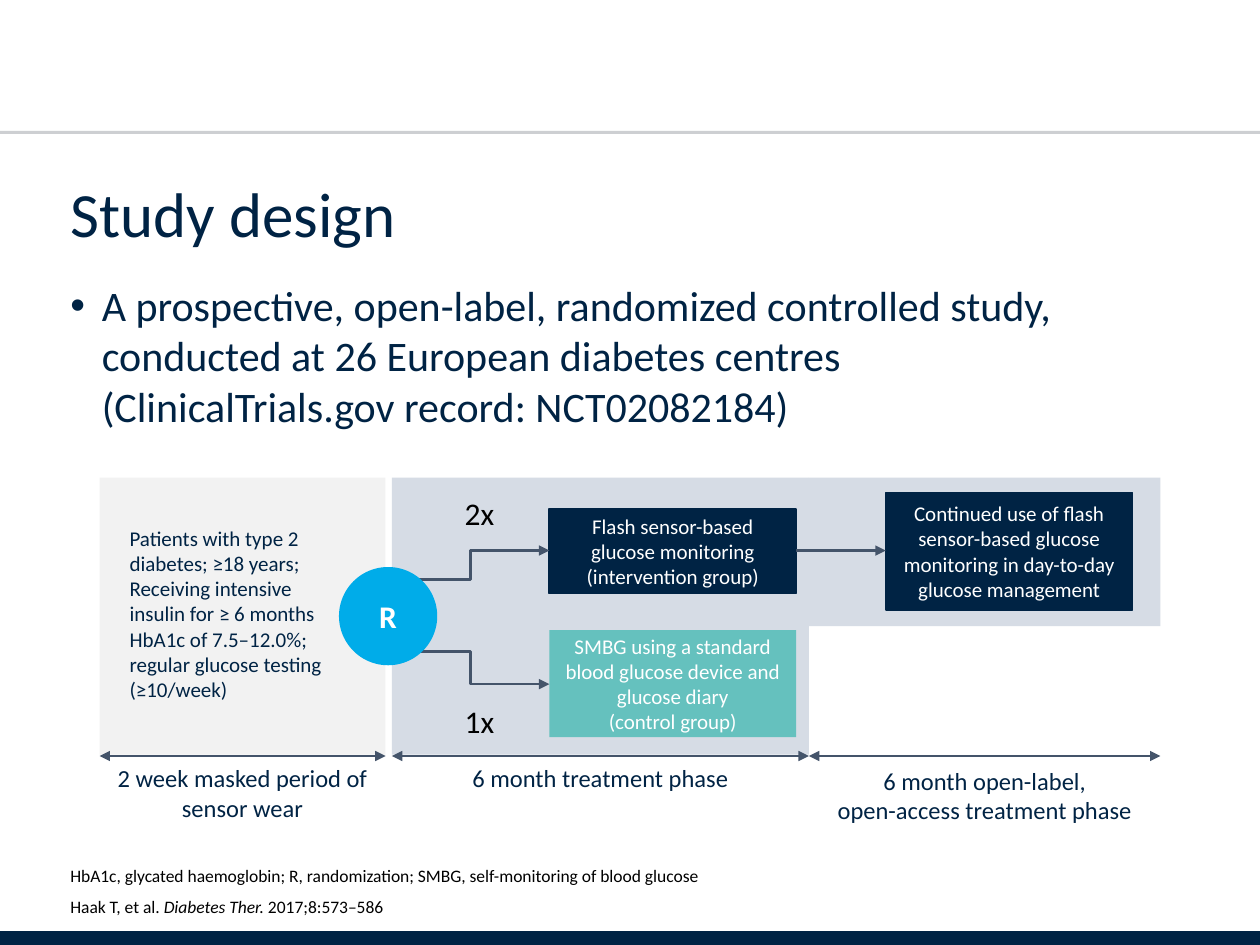
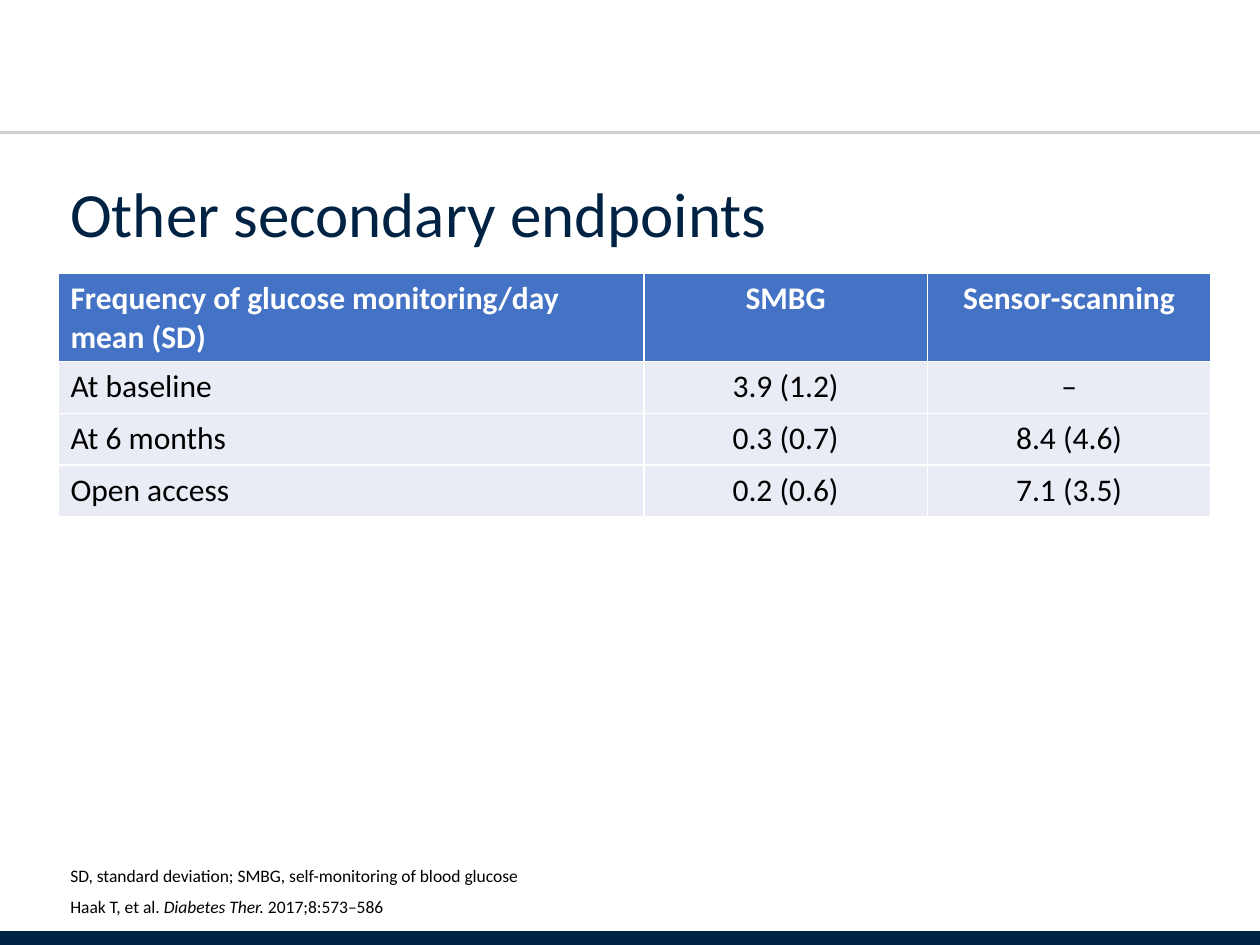
from lxml.etree import SubElement
from pptx import Presentation
from pptx.dml.color import RGBColor
from pptx.enum.shapes import MSO_CONNECTOR as LINE, MSO_SHAPE as SHAPE
from pptx.enum.text import MSO_ANCHOR as ANCHOR, PP_ALIGN as ALIGN
from pptx.oxml.ns import qn
from pptx.util import Inches, Pt

COLORS = {
    "navy": "002344", "rule": "9DA1A6", "slate": "44546A", "grey": "F2F2F2",
    "mist": "D6DCE5", "teal": "65C1BE", "cyan": "00ACE9", "blue": "4472C4",
    "row": "E9EBF5", "white": "FFFFFF", "black": "000000",
}
TITLE_BOX = (0.46, 1.25, 9.13, 0.74)
BODY_BOX = (0.46, 2.17, 9.13, 1.5)
DIAGRAM_BOX = (0.79, 3.79, 8.42, 2.81)
TABLE_BOX = (0.46, 2.17, 9.15, 1.92)
NOTE_BOX = (0.46, 6.73, 9.13, 0.6)
CITATION = "Haak T, et al. *Diabetes Ther.* 2017;8:573–586"


def rgb(name):
    """Return the named colour."""
    return RGBColor.from_string(COLORS[name])


def write(tf, paragraphs, size, color="navy", bold=False, **layout):
    """Fill a text frame; asterisks enclose italics, newlines break lines."""
    tf.word_wrap = True
    for i, text in enumerate(paragraphs):
        p = tf.paragraphs[0] if i == 0 else tf.add_paragraph()
        for name, value in layout.items():
            setattr(p, name, value)
        for j, part in enumerate(text.split("*")):
            for k, line in enumerate(part.split("\n")):
                if k:
                    p.add_line_break()
                r = p.add_run()
                r.text = line
                fmt = {"name": "Calibri", "size": Pt(size), "bold": bold, "italic": j % 2 == 1}
                for name, value in fmt.items():
                    setattr(r.font, name, value)
                r.font.color.rgb = rgb(color)


def add_text(s, box, paragraphs, size, anchor=ANCHOR.TOP, **style):
    """Add a wrapped text box and return its frame."""
    tf = s.shapes.add_textbox(*map(Inches, box)).text_frame
    tf.vertical_anchor = anchor
    write(tf, paragraphs, size, **style)
    return tf


def add_block(s, kind, box, fill, paragraphs=(), size=12, bold=False, outlined=False):
    """Add a filled shape with centred white text."""
    sp = s.shapes.add_shape(kind, *map(Inches, box))
    sp.shadow.inherit = False
    sp.fill.solid()
    sp.fill.fore_color.rgb = rgb(fill)
    if outlined:
        sp.line.color.rgb = rgb(fill)
        sp.line.width = Pt(1)
    else:
        sp.line.fill.background()
    sp.text_frame.vertical_anchor = ANCHOR.MIDDLE
    write(sp.text_frame, paragraphs, size, "white", bold, alignment=ALIGN.CENTER)


def add_line(s, start, end, color="slate", width=1.5, kind=LINE.STRAIGHT, ends=(), alpha=None):
    """Add a connector with optional arrowheads and opacity."""
    cn = s.shapes.add_connector(kind, *map(Inches, start + end))
    cn.line.color.rgb = rgb(color)
    cn.line.width = Pt(width)
    ln = cn.line._get_or_add_ln()
    if alpha:
        SubElement(ln.find(".//" + qn("a:srgbClr")), qn("a:alpha"), val=str(alpha * 1000))
    for end_name in ends:
        SubElement(ln, qn(f"a:{end_name}End"), type="triangle")
    SubElement(cn._element.spPr, qn("a:effectLst"))


def add_frame(prs, title, abbreviations):
    """Add a slide with its bands, title and footnotes."""
    s = prs.slides.add_slide(prs.slide_layouts[6])
    add_line(s, (0, 7.46), (10, 7.46), "navy", 10)
    add_line(s, (0, 1.05), (10, 1.05), "rule", 1.75, alpha=50)
    tf = add_text(s, TITLE_BOX, [title], 36, ANCHOR.BOTTOM, line_spacing=0.9)
    tf.margin_bottom = 0
    add_text(s, NOTE_BOX, [abbreviations, CITATION], 10, ANCHOR.BOTTOM,
             color="black", space_after=Pt(6))
    return s


def add_bullets(s, box, items):
    """Add a bulleted body text."""
    tf = add_text(s, box, items, 24, space_after=Pt(6))
    for p in tf.paragraphs:
        pPr = p._p.get_or_add_pPr()
        pPr.set("marL", str(Inches(0.25)))
        pPr.set("indent", str(-Inches(0.25)))
        SubElement(pPr, qn("a:buFont"), typeface="Arial")
        SubElement(pPr, qn("a:buChar"), char="•")


def add_study_diagram(s, box):
    """Draw the trial phases, both arms and the timeline."""
    left, top, width, _ = box
    masked_w, treat_x, open_x = 2.27, 2.32, 5.63
    arm_x, arm_w, fork_top, fork_bottom = 3.57, 1.96, 0.58, 1.64
    later_x, phase_h = 6.24, 2.2

    def at(x, y, *size):
        return (left + x, top + y, *size)

    phases = [
        (0, masked_w, phase_h, "grey", ["2 week masked period of sensor wear"]),
        (treat_x, open_x - treat_x, phase_h, "mist", ["6 month treatment phase"]),
        (open_x, width - open_x, 1.18, "mist", ["6 month open-label,", "open-access treatment phase"]),
    ]
    for x, w, h, fill, label in phases:
        add_block(s, SHAPE.RECTANGLE, at(x, 0, w, h), fill)
        add_line(s, at(x, phase_h + 0.01), at(x + w, phase_h + 0.01), ends=("head", "tail"))
        add_text(s, at(x, phase_h + 0.02 * len(label), w, 0.57), label, 14, alignment=ALIGN.CENTER)

    add_text(s, at(0.14, 0.33, 1.82, 1.51), [
        "Patients with type 2 diabetes; ≥18 years;",
        "Receiving intensive insulin for ≥ 6 months",
        "HbA1c of 7.5–12.0%; regular glucose testing (≥10/week)"], 12)

    arms = [
        (arm_x, 0.25, 0.67, "navy", ["Flash sensor-based glucose monitoring (intervention group)"]),
        (arm_x, 1.21, 0.85, "teal",
         ["SMBG using a standard blood glucose device and glucose diary", "(control group)"]),
        (later_x, 0.12, 0.93, "navy",
         ["Continued use of flash sensor-based glucose monitoring in day-to-day glucose management"]),
    ]
    for x, y, h, fill, text in arms:
        add_block(s, SHAPE.RECTANGLE, at(x, y, arm_w, h), fill, text, outlined=fill == "navy")

    forks = [(0.81, fork_top, 0.08, "2x"), (1.38, fork_bottom, 1.73, "1x")]
    for start_y, end_y, label_y, ratio in forks:
        add_line(s, at(treat_x, start_y), at(arm_x, end_y), kind=LINE.ELBOW, ends=("tail",))
        add_text(s, at(2.78, label_y, 0.47, 0.32), [ratio], 18,
                 color="black", alignment=ALIGN.CENTER)
    add_line(s, at(arm_x + arm_w, fork_top), at(later_x, fork_top), ends=("tail",))
    add_block(s, SHAPE.OVAL, at(1.9, 0.71, 0.78, 0.78), "cyan", ["R"], 18, True)


def add_results_table(s, box, rows):
    """Add the endpoint table with a coloured header row."""
    table = s.shapes.add_table(len(rows), len(rows[0]), *map(Inches, box)).table
    table.horz_banding = False
    value_w, row_h = 2.25, 0.41
    for i, col in enumerate(table.columns):
        col.width = Inches(value_w if i else box[2] - 2 * value_w)
    for i, row in enumerate(table.rows):
        row.height = Inches(row_h if i else box[3] - 3 * row_h)
        for j, text in enumerate(rows[i]):
            cell = table.cell(i, j)
            cell.fill.solid()
            cell.fill.fore_color.rgb = rgb("row" if i else "blue")
            write(cell.text_frame, [text], 18, "black" if i else "white", i == 0,
                  alignment=ALIGN.CENTER if j else ALIGN.LEFT)


def main():
    """Build and save both slides."""
    prs = Presentation()
    prs.slide_width, prs.slide_height = Inches(10), Inches(7.5)

    s = add_frame(prs, "Study design", "HbA1c, glycated haemoglobin; R, randomization; "
                  "SMBG, self-monitoring of blood glucose")
    add_bullets(s, BODY_BOX, [
        "A prospective, open-label, randomized controlled study, conducted at 26 European "
        "diabetes centres\n(ClinicalTrials.gov record: NCT02082184)"])
    add_study_diagram(s, DIAGRAM_BOX)

    s = add_frame(prs, "Other secondary endpoints",
                  "SD, standard deviation; SMBG, self-monitoring of blood glucose")
    add_results_table(s, TABLE_BOX, [
        ("Frequency of glucose monitoring/day\nmean (SD)", "SMBG", "Sensor-scanning"),
        ("At baseline", "3.9 (1.2)", "–"),
        ("At 6 months", "0.3 (0.7)", "8.4 (4.6)"),
        ("Open access", "0.2 (0.6)", "7.1 (3.5)"),
    ])
    prs.save("out.pptx")


if __name__ == "__main__":
    main()
